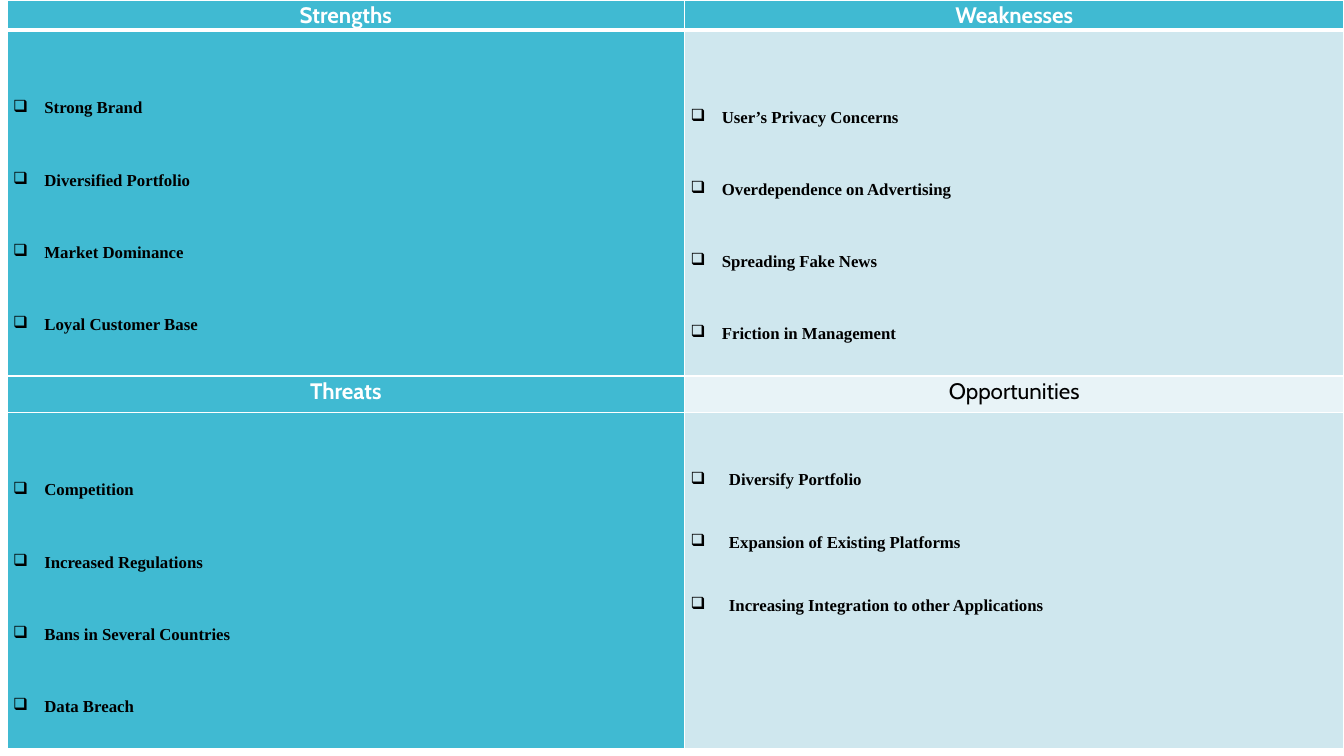
"""Build a SWOT analysis slide as a two-column table."""
import pptx
import pptx.util
import pptx.dml.color
import pptx.enum.text
import pptx.oxml.ns
from lxml import etree

Inches = pptx.util.Inches
Pt = pptx.util.Pt
ALIGN = pptx.enum.text.PP_ALIGN

COLORS = {"white": "FFFFFF", "black": "000000", "teal": "40BAD2",
          "pale": "CFE7EE", "paler": "E8F3F7"}

QUADRANTS = [
    [
        {"title": "Strengths", "fills": ("teal", "teal"), "top": 0.59,
         "items": ["Strong Brand", "Diversified Portfolio",
                   "Market Dominance", "Loyal Customer Base"]},
        {"title": "Weaknesses", "fills": ("teal", "pale"), "top": 0.68,
         "items": ["User’s Privacy Concerns", "Overdependence on Advertising",
                   "Spreading Fake News", "Friction in Management"]},
    ],
    [
        {"title": "Threats", "fills": ("teal", "teal"), "top": 0.59,
         "items": ["Competition", "Increased Regulations",
                   "Bans in Several Countries", "Data Breach"]},
        {"title": "Opportunities", "fills": ("paler", "pale"), "top": 0.58,
         "title_format": {"color": "black", "bold": False},
         "item_format": {"indent": 0.38, "line_spacing": 1.0, "align": ALIGN.JUSTIFY},
         "items": ["Diversify Portfolio", "Expansion of Existing Platforms",
                   "Increasing Integration to other Applications"]},
    ],
]
COLUMN_WIDTHS = [6.72, 6.54]
ROW_HEIGHTS = [0.3, 3.43, 0.36, 3.34]
TITLE_FORMAT = {"font": "Cabin", "size": 16, "color": "white", "bold": True,
                "align": ALIGN.CENTER, "line_spacing": 1.07}
ITEM_FORMAT = {"font": "Times New Roman", "size": 12, "color": "black", "bold": True,
               "align": ALIGN.LEFT, "line_spacing": 1.5, "indent": 0.31,
               "bullet": "❑", "after": 9}


def rgb(name):
    return pptx.dml.color.RGBColor.from_string(COLORS[name])


def add_element(parent, tag, **attributes):
    element = etree.SubElement(parent, pptx.oxml.ns.qn(tag))
    for key, value in attributes.items():
        element.set(key, str(value))
    return element


def write(paragraph, text, *, font, size, color, bold, align, line_spacing,
          indent=0, bullet=None, before=0, after=0):
    paragraph.alignment = align
    paragraph.line_spacing = line_spacing
    paragraph.space_before = Pt(before)
    paragraph.space_after = Pt(after)
    if bullet:
        properties = paragraph._p.get_or_add_pPr()
        properties.set("marL", str(Inches(indent)))
        properties.set("indent", str(-Inches(indent)))
        add_element(properties, "a:buChar", char=bullet)
    run = paragraph.add_run()
    run.text = text
    run.font.name = font
    run.font.size = Pt(size)
    run.font.bold = bold
    run.font.color.rgb = rgb(color)


def style_cell(cell, fill, row, top=0):
    cell.margin_left = cell.margin_right = Inches(0.06)
    cell.margin_top, cell.margin_bottom = Inches(top), 0
    cell.vertical_anchor = pptx.enum.text.MSO_ANCHOR.TOP
    cell.text_frame.word_wrap = True
    widths = {"L": 1, "R": 1, "T": 3 if row == 1 else 1, "B": 3 if row == 0 else 1}
    properties = cell._tc.get_or_add_tcPr()
    for side, width in widths.items():
        line = add_element(properties, f"a:ln{side}", w=Pt(width))
        add_element(add_element(line, "a:solidFill"), "a:srgbClr", val=COLORS["white"])
    cell.fill.solid()
    cell.fill.fore_color.rgb = rgb(fill)


def fill_quadrant(table, row, column, quadrant):
    title_cell, list_cell = table.cell(row, column), table.cell(row + 1, column)
    title_fill, list_fill = quadrant["fills"]
    style_cell(title_cell, title_fill, row)
    style_cell(list_cell, list_fill, row + 1, quadrant["top"])
    write(title_cell.text_frame.paragraphs[0], quadrant["title"],
          **(TITLE_FORMAT | quadrant.get("title_format", {})))
    frame = list_cell.text_frame
    item_format = ITEM_FORMAT | quadrant.get("item_format", {})
    for index, item in enumerate(quadrant["items"]):
        paragraph = frame.add_paragraph() if index else frame.paragraphs[0]
        write(paragraph, item, before=22.5 if index else 0, **item_format)


def main():
    presentation = pptx.Presentation()
    presentation.slide_width, presentation.slide_height = Inches(13.33), Inches(7.5)
    slide = presentation.slides.add_slide(presentation.slide_layouts[6])
    table = slide.shapes.add_table(
        len(ROW_HEIGHTS), len(COLUMN_WIDTHS), Inches(0.07), 0,
        Inches(sum(COLUMN_WIDTHS)), Inches(sum(ROW_HEIGHTS))).table
    table.first_row = table.horz_banding = False
    for column, width in zip(table.columns, COLUMN_WIDTHS):
        column.width = Inches(width)
    for row, height in zip(table.rows, ROW_HEIGHTS):
        row.height = Inches(height)
    for band, quadrants in enumerate(QUADRANTS):
        for column, quadrant in enumerate(quadrants):
            fill_quadrant(table, 2 * band, column, quadrant)
    presentation.save("out.pptx")


if __name__ == "__main__":
    main()
